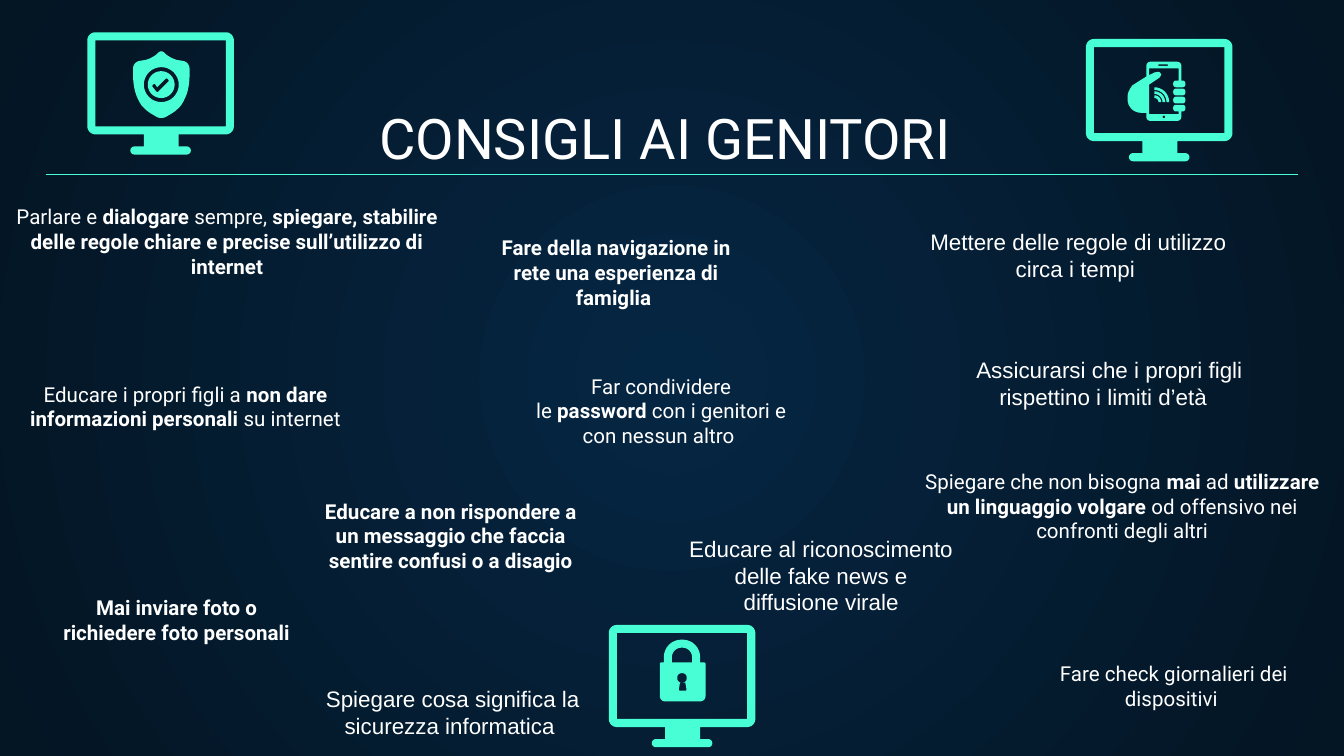
"""Build the slide of online-safety advice for parents."""
import math

from lxml import etree
from pptx import Presentation
from pptx.dml.color import RGBColor
from pptx.enum import shapes, text
from pptx.oxml.ns import qn
from pptx.util import Inches, Pt

THEME = {
    "accent": RGBColor.from_string("48FFD5"),
    "text": RGBColor.from_string("FFFFFF"),
    "glow": ("052643", "041523"),
    "line": Pt(0.75),
}
STYLES = {
    "title": {"font": "Roboto", "size": 30, "inset": (0.1, 0.1), "anchor": "BOTTOM", "fit": "NONE"},
    "tip": {"font": "Roboto", "size": 11, "inset": (0.1, 0.1), "anchor": "TOP", "fit": "NONE"},
    "note": {"font": "Arial", "size": 12, "inset": (0.1, 0.05), "anchor": "TOP", "fit": "SHAPE_TO_FIT_TEXT"},
}
BOLD, HARD_SPACE = "**", "_"
TEXTS = [
    ("title", (0.34, 0.71, 9.32, 0.66), "CONSIGLI AI GENITORI "),
    ("tip", (-0.06, 1.42, 3.5, 0.55),
     "Parlare e_**dialogare**_sempre,_**spiegare,_stabilire delle regole chiare e precise sull’utilizzo di internet**"),
    ("tip", (3.77, 2.68, 2.3, 0.55), "Far condividere le_**password**_con i genitori e con nessun altro "),
    ("tip", (3.55, 1.65, 2.07, 0.55), "**Fare della navigazione in rete una esperienza di famiglia **"),
    ("tip", (0.12, 2.74, 2.52, 0.55),
     "Educare i propri figli a_**non dare informazioni personali**_su internet "),
    ("tip", (6.74, 3.39, 3.22, 0.55),
     "Spiegare che non bisogna_**mai**_ad_**utilizzare un linguaggio volgare**_od offensivo nei confronti degli altri"),
    ("tip", (2.22, 3.61, 2.27, 0.55),
     "**Educare a non rispondere a un messaggio che faccia sentire confusi o a disagio**"),
    ("tip", (7.7, 4.82, 2.07, 0.55), "Fare check giornalieri dei dispositivi "),
    ("tip", (0.28, 4.33, 2.07, 0.55), "**Mai inviare foto o richiedere foto personali**"),
    ("note", (6.74, 1.65, 2.57, 0.5), "Mettere delle regole di utilizzo circa i tempi "),
    ("note", (6.81, 2.6, 2.89, 0.5), "Assicurarsi che i propri figli rispettino i limiti d’età_ "),
    ("note", (2.02, 5.05, 2.7, 0.5), "Spiegare_cosa significa la sicurezza informatica "),
    ("note", (5, 3.93, 2.22, 0.71), "Educare al riconoscimento delle fake news e diffusione virale"),
]


def box(x, y, w, h, r=0):
    return [(x, y, r), (x + w, y, r), (x + w, y + h, r), (x, y + h, r)]


def disc(x, y, r):
    return box(x - r, y - r, 2 * r, 2 * r, r)


def wave(x, y, inner, outer):
    return [(x, y - outer, 0), (x + outer, y - outer, outer), (x + outer, y, 0),
            (x + inner, y, 0), (x + inner, y - inner, inner), (x, y - inner, 0)]


SHIELD_SIDE = [(0.14, 0.06, 0.06), (0, 0.08, 0.05), (0, 0.24, 0.05),
               (0.03, 0.36, 0.06), (0.09, 0.44, 0.05)]
MONITOR = [
    [(0, 0, 0.06), (1.09, 0, 0.06), (1.09, 0.76, 0.06), (0.68, 0.76, 0), (0.68, 0.85, 0),
     (0.77, 0.85, 0.03), (0.77, 0.91, 0.03), (0.32, 0.91, 0.03), (0.32, 0.85, 0.03),
     (0.42, 0.85, 0), (0.42, 0.76, 0), (0, 0.76, 0.06)],
    box(0.06, 0.06, 0.97, 0.64),
]
CHECK = [
    disc(0.1, 0.1, 0.1),
    [(0.14, 0.05, 0.01), (0.16, 0.07, 0.01), (0.07, 0.16, 0.01),
     (0.03, 0.11, 0.01), (0.05, 0.09, 0.01), (0.07, 0.12, 0)],
]
SHIELD = [
    [(0.21, -0.01, 0.03)] + SHIELD_SIDE + [(0.21, 0.51, 0.04)]
    + [(0.42 - x, y, r) for x, y, r in reversed(SHIELD_SIDE)],
    disc(0.21, 0.25, 0.13),
]
PHONE = [
    [(0.14, 0, 0.03), (0.14, 0.11, 0), (0.06, 0.16, 0.04), (0, 0.2, 0.06), (0, 0.38, 0.1),
     (0.14, 0.38, 0), (0.14, 0.44, 0.03), (0.4, 0.44, 0.03), (0.4, 0.37, 0),
     (0.43, 0.37, 0.02), (0.43, 0.32, 0.02), (0.34, 0.32, 0.02), (0.34, 0.37, 0.02),
     (0.38, 0.37, 0), (0.38, 0.39, 0), (0.16, 0.39, 0), (0.16, 0.17, 0), (0.19, 0.15, 0),
     (0.25, 0.11, 0.02), (0.25, 0.07, 0.03), (0.2, 0.08, 0), (0.16, 0.1, 0), (0.16, 0.05, 0),
     (0.38, 0.05, 0), (0.38, 0.14, 0), (0.34, 0.14, 0.02), (0.34, 0.19, 0.02),
     (0.43, 0.19, 0.02), (0.43, 0.14, 0.02), (0.4, 0.14, 0), (0.4, 0, 0.03)],
    box(0.23, 0.02, 0.07, 0.01),
    disc(0.27, 0.41, 0.01),
    *[box(0.34, y, 0.09, 0.05, 0.02) for y in (0.2, 0.26)],
    *[wave(0.2, 0.3, r, r + 0.02) for r in (0.03, 0.06, 0.09)],
]
LOCK = [
    [(0.03, 0.17, 0), (0.03, 0, 0.13), (0.3, 0, 0.13), (0.3, 0.17, 0), (0.34, 0.17, 0.01),
     (0.34, 0.46, 0.04), (0, 0.46, 0.04), (0, 0.17, 0.01)],
    [(0.09, 0.17, 0), (0.09, 0.06, 0.07), (0.24, 0.06, 0.07), (0.24, 0.17, 0)],
    [(0.13, 0.25, 0.03), (0.2, 0.25, 0.03), (0.2, 0.32, 0.03), (0.19, 0.32, 0),
     (0.2, 0.38, 0.01), (0.14, 0.38, 0.01), (0.15, 0.32, 0), (0.13, 0.32, 0.03)],
]
ICONS = [
    (MONITOR, 4.53, 4.65), (MONITOR, 0.65, 0.24), (CHECK, 1.1, 0.53), (SHIELD, 0.99, 0.38),
    (MONITOR, 8.08, 0.29), (PHONE, 8.39, 0.46), (LOCK, 4.91, 4.76),
]


def outline(corners, left, top, steps=8):
    """Return the points of a closed outline whose corners are rounded."""
    points = []
    for i, (x, y, r) in enumerate(corners):
        ends = []
        for nx, ny, _ in (corners[i - 1], corners[(i + 1) % len(corners)]):
            k = r / math.hypot(nx - x, ny - y)
            ends.append((x + (nx - x) * k, y + (ny - y) * k))
        (ax, ay), (bx, by) = ends
        for n in range(steps + 1 if r else 1):
            t = n / steps
            a, m, b = (1 - t) ** 2, 2 * t * (1 - t) * math.sqrt(0.5), t * t
            px, py = ((a * p + m * c + b * q) / (a + m + b) for p, c, q in ((ax, x, bx), (ay, y, by)))
            points.append((Inches(left + px), Inches(top + py)))
    return points


def add_icon(s, contours, left, top):
    first, *rest = [outline(c, left, top) for c in contours]
    builder = s.shapes.build_freeform(*first[0], scale=1.0)
    builder.add_line_segments(first[1:], close=True)
    for points in rest:
        builder.move_to(*points[0])
        builder.add_line_segments(points[1:], close=True)
    sp = builder.convert_to_shape()
    sp.shadow.inherit = False
    sp.fill.solid()
    sp.fill.fore_color.rgb = THEME["accent"]
    sp.line.fill.background()


def add_text(s, style, at, content):
    look = STYLES[style]
    tf = s.shapes.add_textbox(*map(Inches, at)).text_frame
    dx, dy = map(Inches, look["inset"])
    frame = {"word_wrap": True, "margin_left": dx, "margin_right": dx, "margin_top": dy, "margin_bottom": dy,
             "vertical_anchor": text.MSO_ANCHOR[look["anchor"]], "auto_size": text.MSO_AUTO_SIZE[look["fit"]]}
    for name, value in frame.items():
        setattr(tf, name, value)
    p = tf.paragraphs[0]
    p.alignment = text.PP_ALIGN.CENTER
    for i, part in enumerate(content.replace(HARD_SPACE, chr(160)).split(BOLD)):
        if part:
            r = p.add_run()
            r.text = part
            for name, value in {"name": look["font"], "size": Pt(look["size"]), "bold": i % 2 == 1}.items():
                setattr(r.font, name, value)
            r.font.color.rgb = THEME["text"]


def add_background(s):
    fill = s.background.fill
    fill.gradient()
    for stop, color in zip(fill.gradient_stops, THEME["glow"]):
        stop.color.rgb = RGBColor.from_string(color)
    grad = s.element.xpath(".//a:gradFill")[0]
    for lin in grad.findall(qn("a:lin")):
        grad.remove(lin)
    glow = etree.SubElement(grad, qn("a:path"), {"path": "circle"})
    etree.SubElement(glow, qn("a:fillToRect"), dict.fromkeys("ltrb", "50000"))


def main():
    prs = Presentation()
    prs.slide_width, prs.slide_height = Inches(10), Inches(10 * 9 / 16)
    s = prs.slides.add_slide(prs.slide_layouts[6])
    add_background(s)
    for contours, left, top in ICONS:
        add_icon(s, contours, left, top)
    rule = s.shapes.add_connector(shapes.MSO_CONNECTOR.STRAIGHT, *map(Inches, (0.34, 1.3, 9.66, 1.3)))
    rule.line.color.rgb = THEME["accent"]
    rule.line.width = THEME["line"]
    etree.SubElement(rule.element.spPr, qn("a:effectLst"))
    for style, at, content in TEXTS:
        add_text(s, style, at, content)
    prs.save("out.pptx")


if __name__ == "__main__":
    main()
